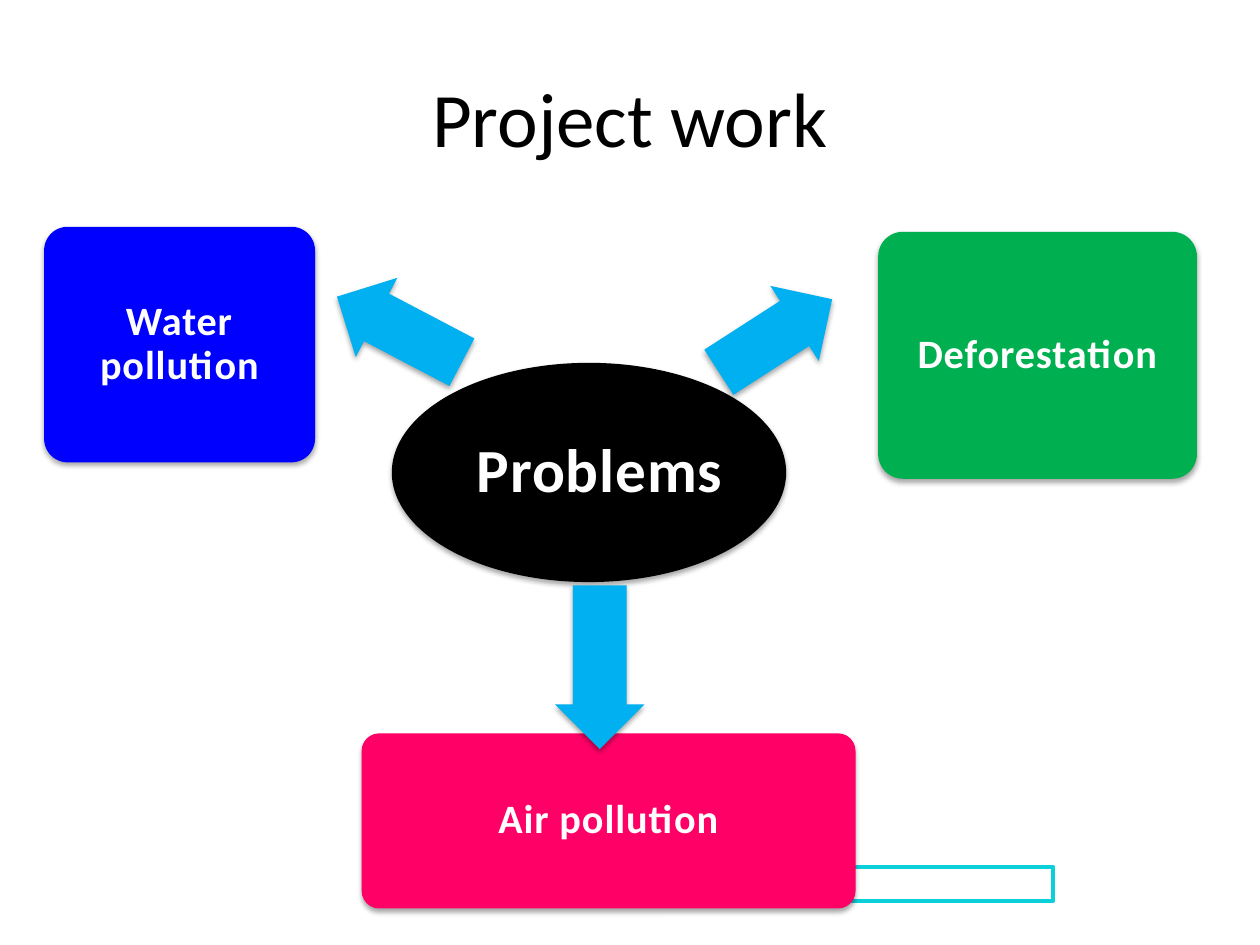
from pptx import Presentation
from pptx.dml.color import RGBColor
from pptx.enum.shapes import MSO_SHAPE
from pptx.enum.text import MSO_ANCHOR, PP_ALIGN
from pptx.oxml import parse_xml
from pptx.oxml.ns import nsdecls
from pptx.util import Inches, Pt

BLACK = RGBColor(0, 0, 0)
WHITE = RGBColor(255, 255, 255)
PALE = RGBColor(0xFE, 0xFE, 0xFE)
TEAL = RGBColor(0x0B, 0xD0, 0xD9)
PINK = RGBColor(0xFF, 0x00, 0x66)
BLUE = RGBColor(0, 0, 255)
GREEN = RGBColor(0x00, 0xB0, 0x50)
SKY = RGBColor(0x00, 0xB0, 0xF0)
OLIVE = RGBColor(0x9B, 0xBB, 0x37)
FONT = "Calibri"
WIDE, HIGH = 10, 7.5


def place(slide, kind, box, fill):
    """Add a plain filled shape in a box of inches."""
    shape = slide.shapes.add_shape(kind, *map(Inches, box))
    shape.shadow.inherit = False
    shape.fill.solid()
    shape.fill.fore_color.rgb = fill
    shape.line.fill.background()
    return shape


def shade(shape):
    """Give a shape a soft shadow straight below it."""
    drop = parse_xml(
        f'<a:outerShdw {nsdecls("a")} blurRad="{Pt(3.1)}" dist="{Pt(1.8)}" '
        f'dir="5400000" rotWithShape="0"><a:srgbClr val="{BLACK}">'
        '<a:alpha val="35000"/></a:srgbClr></a:outerShdw>')
    shape.element.spPr.find("{*}effectLst").append(drop)


def style(run, size, color):
    """Set the font of a run."""
    run.font.name = FONT
    run.font.size = Pt(size)
    run.font.color.rgb = color


def label(shape, text, size, pads):
    """Write bold outlined text in the middle of a shape."""
    frame = shape.text_frame
    frame.word_wrap = True
    frame.vertical_anchor = MSO_ANCHOR.MIDDLE
    frame.margin_left, frame.margin_right = map(Inches, pads)
    frame.margin_top = frame.margin_bottom = Inches(0.05)
    para = frame.paragraphs[0]
    para.alignment = PP_ALIGN.CENTER
    para.line_spacing = 0.9
    run = para.add_run()
    run.text = text
    style(run, size, PALE)
    run.font.bold = True
    props = run.font._element
    props.set("spc", "50")
    props.insert(0, parse_xml(
        f'<a:ln {nsdecls("a")} w="{Pt(1)}"><a:solidFill>'
        f'<a:srgbClr val="{OLIVE}"/></a:solidFill></a:ln>'))


def hub(slide, box):
    """Draw the central ellipse."""
    shape = place(slide, MSO_SHAPE.OVAL, box, BLACK)
    shade(shape)
    label(shape, "Problems", 35, (0.17, 0))


def card(slide, box, text, fill):
    """Draw a rounded card that names one problem."""
    shape = place(slide, MSO_SHAPE.ROUNDED_RECTANGLE, box, fill)
    shape.adjustments[0] = 0.1
    shade(shape)
    label(shape, text, 23, (0.1, 0.1))


def arrow(slide, kind, box, turn):
    """Draw a turned block arrow."""
    shape = place(slide, kind, box, SKY)
    shape.adjustments[0] = 0.6
    shape.adjustments[1] = 0.5
    shape.rotation = turn
    shade(shape)


def title(slide, box, text):
    """Fill the title placeholder."""
    head = slide.shapes.title
    head.left, head.top, head.width, head.height = map(Inches, box)
    head.text_frame.vertical_anchor = MSO_ANCHOR.MIDDLE
    para = head.text_frame.paragraphs[0]
    para.alignment = PP_ALIGN.CENTER
    run = para.add_run()
    run.text = text
    style(run, 44, BLACK)


def frame(slide, box):
    """Draw the thin outlined bar."""
    bar = place(slide, MSO_SHAPE.RECTANGLE, box, WHITE)
    bar.line.color.rgb = TEAL
    bar.line.width = Pt(2)


def main():
    """Build the slide and save it."""
    deck = Presentation()
    deck.slide_width, deck.slide_height = Inches(WIDE), Inches(HIGH)
    slide = deck.slides.add_slide(deck.slide_layouts[5])
    title(slide, (0.05 * WIDE, 0.04 * HIGH, 0.9 * WIDE, HIGH / 6), "Project work")
    frame(slide, (6.33, 6.88, 2.03, 0.27))
    hub(slide, (3.11, 2.88, 3.13, 1.74))
    for box, text, fill in (
        ((2.87, 5.82, 3.92, 1.39), "Air pollution", PINK),
        ((0.35, 1.8, 2.15, 1.87), "Water pollution", BLUE),
        ((6.97, 1.84, 2.53, 1.96), "Deforestation", GREEN),
    ):
        card(slide, box, text, fill)
    for kind, box, turn in (
        (MSO_SHAPE.LEFT_ARROW, (2.61, 2.26, 1.12, 0.71), 27.7),
        (MSO_SHAPE.RIGHT_ARROW, (5.62, 2.31, 1.07, 0.71), 327.2),
        (MSO_SHAPE.LEFT_ARROW, (4.11, 4.94, 1.3, 0.71), 270),
    ):
        arrow(slide, kind, box, turn)
    deck.save("out.pptx")


if __name__ == "__main__":
    main()
